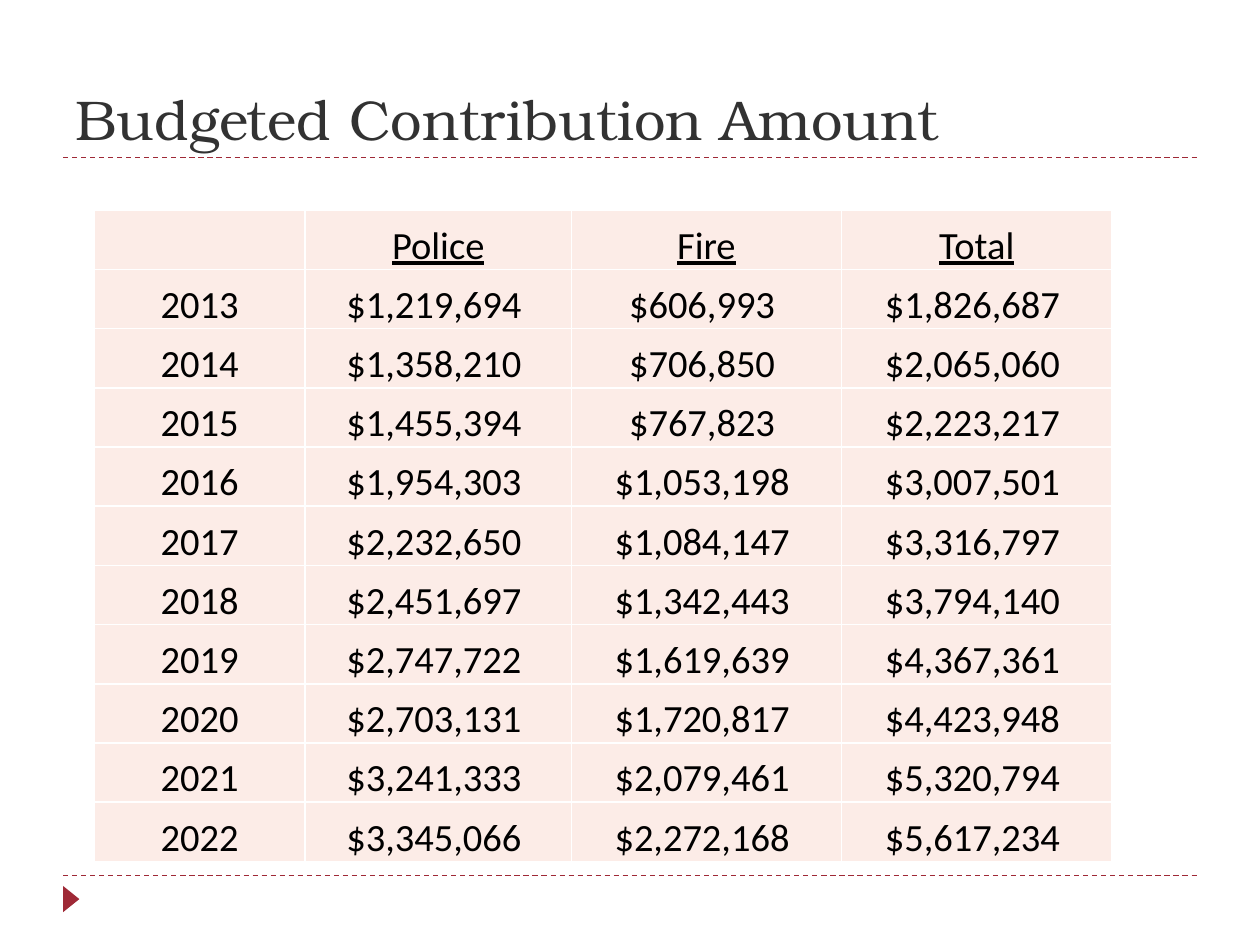
"""Build the slide of budgeted police and fire contributions by year."""
import lxml.etree
import pptx
import pptx.dml.color
import pptx.enum.dml
import pptx.enum.shapes
import pptx.enum.text
import pptx.oxml
import pptx.oxml.ns
import pptx.util

Cm = pptx.util.Cm
Pt = pptx.util.Pt
qn = pptx.oxml.ns.qn

HEADING = "Budgeted Contribution Amount"
HEADERS = ["", "Police", "Fire", "Total"]
CONTRIBUTIONS = [
    (2013, 1219694, 606993),
    (2014, 1358210, 706850),
    (2015, 1455394, 767823),
    (2016, 1954303, 1053198),
    (2017, 2232650, 1084147),
    (2018, 2451697, 1342443),
    (2019, 2747722, 1619639),
    (2020, 2703131, 1720817),
    (2021, 3241333, 2079461),
    (2022, 3345066, 2272168),
]
COLORS = {"accent": "9F2936", "heading": "323232", "text": "000000",
          "cell": "FCECE7", "border": "FFFFFF"}
MARGIN, CONTENT_WIDTH = 1.27, 22.86
RULE_HEIGHTS = [3.18, 17.65]
TABLE_LEFT, TABLE_TOP, TABLE_HEIGHT = 1.9, 4.24, 13.13
COLUMN_WIDTHS = [4.25, 5.37, 5.44, 5.46]
HEADING_FONT = {"name": "TeX Gyre Bonum", "size": Pt(32)}
CELL_FONT = {"name": "Calibri", "size": Pt(22), "bold": False}
CELL_FORMAT = {"vertical_anchor": pptx.enum.text.MSO_ANCHOR.BOTTOM,
               "margin_left": Cm(0.03), "margin_right": Cm(0.03),
               "margin_top": Cm(0.03), "margin_bottom": 0}


def rgb(part):
    return pptx.dml.color.RGBColor.from_string(COLORS[part])


def apply(target, values):
    for name, value in values.items():
        setattr(target, name, value)


def write(paragraph, words, font, color):
    run = paragraph.add_run()
    run.text = words
    apply(run.font, font)
    run.font.color.rgb = rgb(color)


def add_rule(slide, height):
    rule = slide.shapes.add_connector(
        pptx.enum.shapes.MSO_CONNECTOR.STRAIGHT,
        Cm(MARGIN), Cm(height), Cm(MARGIN + CONTENT_WIDTH), Cm(height))
    rule.line.color.rgb = rgb("accent")
    apply(rule.line, {"width": Pt(0.75),
                      "dash_style": pptx.enum.dml.MSO_LINE.DASH})
    properties = rule._element.find(qn("p:spPr"))
    lxml.etree.SubElement(properties, qn("a:effectLst"))


def add_marker(slide):
    marker = slide.shapes.add_shape(
        pptx.enum.shapes.MSO_SHAPE.ISOSCELES_TRIANGLE,
        Cm(1.17), Cm(17.96), Cm(0.53), Cm(0.33))
    marker.rotation = 90
    marker.shadow.inherit = False
    marker.fill.solid()
    marker.fill.fore_color.rgb = rgb("accent")
    marker.line.fill.background()


def add_heading(slide):
    frame = slide.shapes.add_textbox(
        Cm(MARGIN), Cm(0.64), Cm(CONTENT_WIDTH), Cm(2.54)).text_frame
    apply(frame, {"word_wrap": True,
                  "vertical_anchor": pptx.enum.text.MSO_ANCHOR.BOTTOM})
    write(frame.paragraphs[0], HEADING, HEADING_FONT, "heading")


def add_borders(cell):
    properties = cell._tc.get_or_add_tcPr()
    for position, side in enumerate(["lnL", "lnR", "lnT", "lnB"]):
        border = lxml.etree.Element(qn(f"a:{side}"), w=str(Pt(1)))
        fill = lxml.etree.SubElement(border, qn("a:solidFill"))
        lxml.etree.SubElement(fill, qn("a:srgbClr"), val=COLORS["border"])
        properties.insert(position, border)


def add_contributions(slide):
    rows = [HEADERS] + [
        [str(year)] + [f"${amount:,} " for amount in (police, fire, police + fire)]
        for year, police, fire in CONTRIBUTIONS]
    table = slide.shapes.add_table(
        len(rows), len(HEADERS), Cm(TABLE_LEFT), Cm(TABLE_TOP),
        Cm(sum(COLUMN_WIDTHS)), Cm(TABLE_HEIGHT)).table
    apply(table, {"first_row": False, "horz_banding": False})
    for column, width in zip(table.columns, COLUMN_WIDTHS):
        column.width = Cm(width)
    for row_index, row in enumerate(rows):
        table.rows[row_index].height = Cm(TABLE_HEIGHT / len(rows))
        for column_index, words in enumerate(row):
            cell = table.cell(row_index, column_index)
            apply(cell, CELL_FORMAT)
            cell.fill.solid()
            cell.fill.fore_color.rgb = rgb("cell")
            add_borders(cell)
            if words:
                paragraph = cell.text_frame.paragraphs[0]
                paragraph.alignment = pptx.enum.text.PP_ALIGN.CENTER
                write(paragraph, words,
                      {**CELL_FONT, "underline": row_index == 0}, "text")


def main():
    deck = pptx.Presentation()
    apply(deck, {"slide_width": Cm(25.4), "slide_height": Cm(19.05)})
    slide = deck.slides.add_slide(deck.slide_layouts[6])
    for height in RULE_HEIGHTS:
        add_rule(slide, height)
    add_marker(slide)
    add_heading(slide)
    add_contributions(slide)
    deck.save("out.pptx")


if __name__ == "__main__":
    main()
